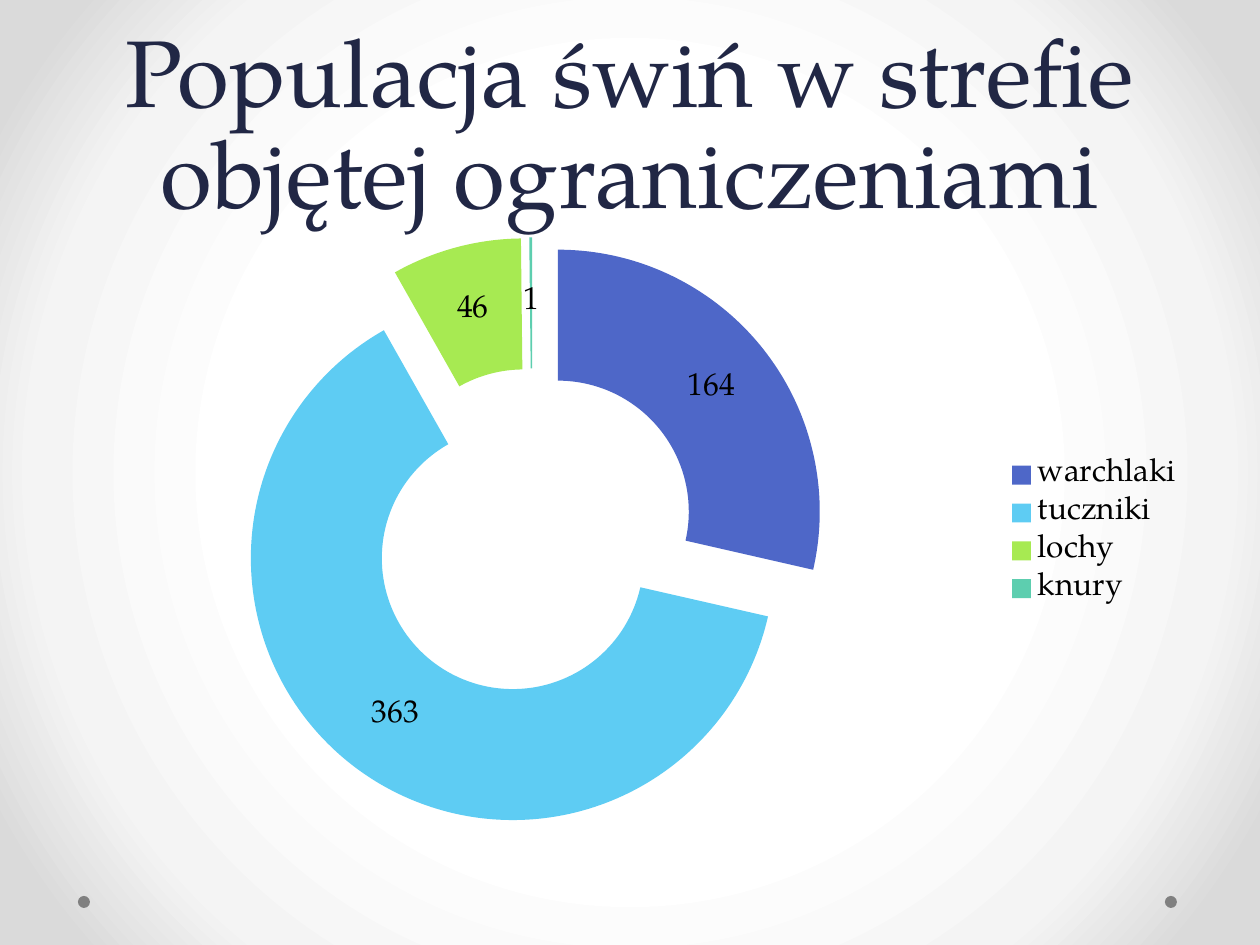
from pptx import Presentation, oxml
from pptx.chart import data
from pptx.dml import color
from pptx.enum import chart as ch, shapes, text
from pptx.oxml import ns
from pptx.util import Pt

PX = 914400 // 126
FONT = "TeX Gyre Pagella"
C = {"title": "212745", "dot": "808080", "text": "000000",
     "warchlaki": "4E67C8", "tuczniki": "5ECCF3",
     "lochy": "A7EA52", "knury": "5DCEAF"}
STOPS = {50: "FFFFFF", 76: "F4F4F4", 92: "DADADA"}
PIGS = {"warchlaki": 164, "tuczniki": 363, "lochy": 46, "knury": 1}


def rgb(name):
    return color.RGBColor.from_string(C[name])


def box(*lengths):
    return [n * PX for n in lengths]


prs = Presentation()
prs.slide_width, prs.slide_height = box(1260, 945)
s = prs.slides.add_slide(prs.slide_layouts[6])

fill = s.background.fill
fill.gradient()
grad = s.background._cSld.find(".//" + ns.qn("a:gradFill"))
stops = "".join(f'<a:gs pos="{pos * 1000}"><a:srgbClr val="{c}"/></a:gs>'
                for pos, c in STOPS.items())
grad.getparent().replace(grad, oxml.parse_xml(
    f'<a:gradFill {ns.nsdecls("a")} rotWithShape="1"><a:gsLst>{stops}</a:gsLst>'
    '<a:path path="circle"><a:fillToRect l="50000" t="50000" r="50000" b="50000"/>'
    '</a:path></a:gradFill>'))

for x in (1165, 78):
    sp = s.shapes.add_shape(shapes.MSO_SHAPE.OVAL, *box(x, 896, 12, 12))
    sp.shadow.inherit = False
    sp.fill.solid()
    sp.fill.fore_color.rgb = rgb("dot")
    sp.line.fill.background()

tf = s.shapes.add_textbox(*box(63, 14, 1134, 220)).text_frame
for key, value in {"word_wrap": True, "vertical_anchor": text.MSO_ANCHOR.BOTTOM}.items():
    setattr(tf, key, value)
p = tf.paragraphs[0]
for key, value in {"alignment": text.PP_ALIGN.CENTER, "line_spacing": Pt(58)}.items():
    setattr(p, key, value)
r = p.add_run()
r.text = "Populacja świń w strefie objętej ograniczeniami"
for key, value in {"name": FONT, "size": Pt(54)}.items():
    setattr(r.font, key, value)
r.font.color.rgb = rgb("title")

cd = data.CategoryChartData()
cd.categories = list(PIGS)
cd.add_series("Series 1", list(PIGS.values()))
chart = s.shapes.add_chart(ch.XL_CHART_TYPE.DOUGHNUT_EXPLODED,
                           *box(63, 220, 1134, 624), cd).chart
for key, value in {"has_title": False, "has_legend": True}.items():
    setattr(chart, key, value)
for key, value in {"name": FONT, "size": Pt(18)}.items():
    setattr(chart.font, key, value)
chart.font.color.rgb = rgb("text")
for key, value in {"position": ch.XL_LEGEND_POSITION.RIGHT,
                   "include_in_layout": False}.items():
    setattr(chart.legend, key, value)

plot = chart.plots[0]
for key, value in {"vary_by_categories": True, "has_data_labels": True}.items():
    setattr(plot, key, value)
for key, value in {"show_value": True, "show_percentage": False}.items():
    setattr(plot.data_labels, key, value)
for i, name in enumerate(PIGS):
    point = plot.series[0].points[i]
    point.format.fill.solid()
    point.format.fill.fore_color.rgb = rgb(name)

prs.save("out.pptx")
